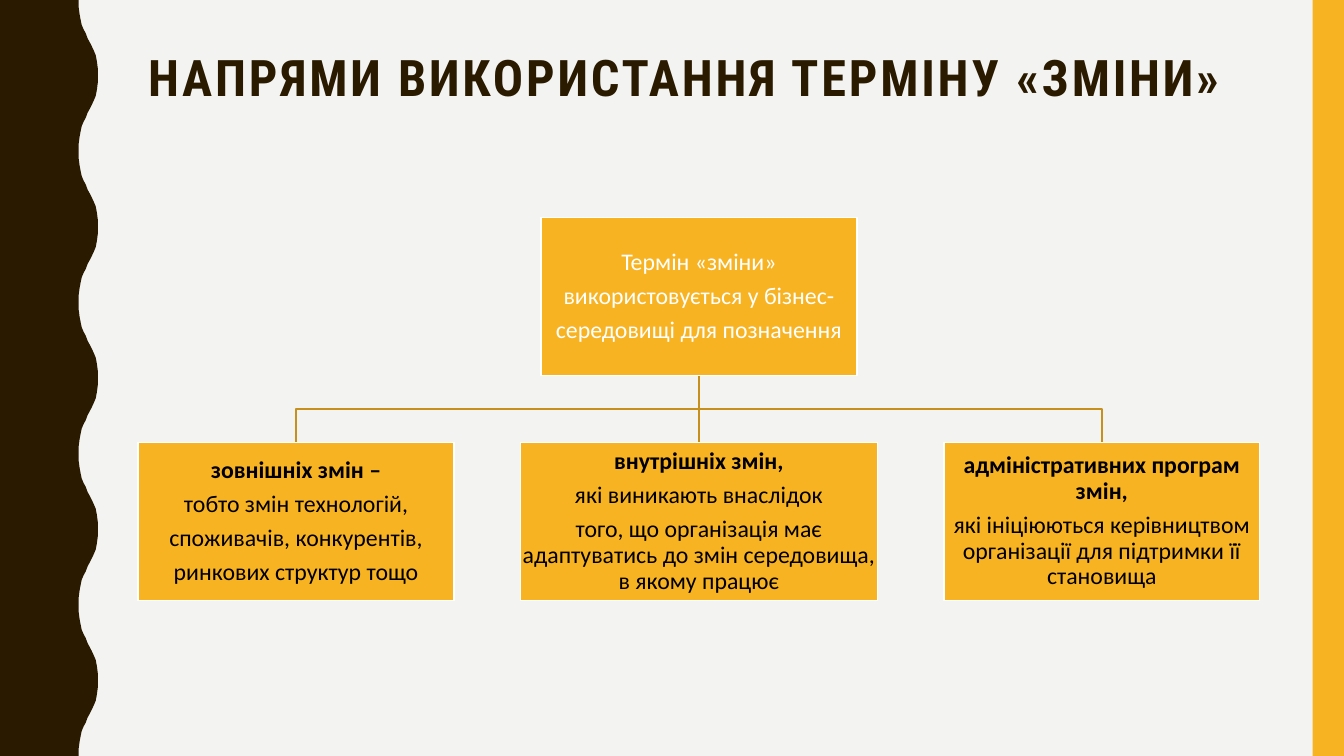
from pptx import Presentation
from pptx.dml.color import RGBColor
from pptx.enum.shapes import MSO_CONNECTOR, MSO_SHAPE
from pptx.enum.text import MSO_ANCHOR, PP_ALIGN
from pptx.oxml.ns import qn
from pptx.util import Inches, Pt
from lxml.etree import SubElement

COLORS = {"bg": "F3F3F2", "dark": "2A1A00", "amber": "F8B323",
          "link": "C78F1C", "white": "FFFFFF", "black": "000000"}

# Half a wave: (share of its width, share of its height), trough to crest
HALF_WAVE = [(0, 0), (0, .09), (.05, .19), (.11, .27), (.16, .33), (.26, .39),
             (.37, .44), (.47, .51), (.58, .56), (.68, .61), (.79, .67),
             (.89, .73), (.95, .81), (1, .91), (1, 1)]

ROOT = ["Термін «зміни»", "використовується у бізнес-",
        "середовищі для позначення"]
BRANCHES = [
    (23.5, ["зовнішніх змін –", "тобто змін технологій,",
            "споживачів, конкурентів,", "ринкових структур тощо"]),
    (26.55, ["внутрішніх змін,", "які виникають внаслідок",
             "того, що організація має адаптуватись до змін середовища, "
             "в якому працює"]),
    (23.5, ["адміністративних програм змін,",
            "які ініціюються керівництвом організації для підтримки її "
            "становища"]),
]


class Deck:
    """Holds the style and the slide; all lengths are percent of its size."""

    def __init__(self):
        self.prs = Presentation()
        self.prs.slide_width, self.prs.slide_height = Inches(13.33), Inches(7.5)
        self.s = self.prs.slides.add_slide(self.prs.slide_layouts[6])
        self.paint(self.s.background.fill, "bg")

    def paint(self, fill, color):
        fill.solid()
        fill.fore_color.rgb = RGBColor.from_string(COLORS[color])

    def stroke(self, line, color):
        self.paint(line.fill, color)
        line.width = Pt(1)

    def x(self, share):
        return round(self.prs.slide_width * share / 100)

    def y(self, share):
        return round(self.prs.slide_height * share / 100)

    def area(self, left, top, width, height):
        return self.x(left), self.y(top), self.x(width), self.y(height)

    def outline(self, points, close):
        pts = [(self.x(x), self.y(y)) for x, y in points]
        fb = self.s.shapes.build_freeform(*pts[0])
        fb.add_line_segments(pts[1:], close=close)
        sp = fb.convert_to_shape()
        sp.shadow.inherit = False
        return sp

    def wavy_edge(self, trough, width, halves):
        step = 100 / halves
        points = [(0, 0)]
        for i in range(halves):
            half = HALF_WAVE
            if i % 2:
                half = [(dx, 1 - dy) for dx, dy in reversed(HALF_WAVE)]
            points += [(trough + width * dx, step * (i + dy)) for dx, dy in half]
        sp = self.outline(points + [(0, 100)], close=True)
        self.paint(sp.fill, "dark")
        sp.line.fill.background()

    def rect(self, *area, border=None):
        sp = self.s.shapes.add_shape(MSO_SHAPE.RECTANGLE, *self.area(*area))
        sp.shadow.inherit = False
        self.paint(sp.fill, "amber")
        if border:
            self.stroke(sp.line, border)
        else:
            sp.line.fill.background()
        return sp

    def put_text(self, p, text, font, size, color, bold):
        r = p.add_run()
        r.text = text
        p.line_spacing = 0.9
        p.font.name, p.font.size, p.font.bold = font, Pt(size), bold
        p.font.color.rgb = RGBColor.from_string(COLORS[color])
        return r

    def title(self, text, *area):
        tf = self.s.shapes.add_textbox(*self.area(*area)).text_frame
        tf.word_wrap = True
        tf.vertical_anchor = MSO_ANCHOR.MIDDLE
        r = self.put_text(tf.paragraphs[0], text, "Roboto Condensed", 36, "dark", True)
        r._r.get_or_add_rPr().set("spc", "200")

    def box(self, lines, *area, color="black", bold_first=True):
        tf = self.rect(*area, border="white").text_frame
        tf.word_wrap = True
        tf.vertical_anchor = MSO_ANCHOR.MIDDLE
        tf.margin_left = tf.margin_right = Inches(0.01)
        tf.margin_top = tf.margin_bottom = Inches(0.01)
        for i, line in enumerate(lines):
            p = tf.paragraphs[0] if i == 0 else tf.add_paragraph()
            p.alignment = PP_ALIGN.CENTER
            p.space_after = Pt(6)
            self.put_text(p, line, "Calibri", 17, color, bold_first and i == 0)

    def link(self, x1, y1, x2, y2):
        """Joins parent to child: straight when aligned, else with two bends."""
        if abs(x1 - x2) < 0.01:
            sp = self.s.shapes.add_connector(
                MSO_CONNECTOR.STRAIGHT, self.x(x1), self.y(y1), self.x(x2), self.y(y2))
            SubElement(sp._element.spPr, qn("a:effectLst"))
            self.stroke(sp.line, "link")
        else:
            mid = (y1 + y2) / 2
            sp = self.outline([(x1, y1), (x1, mid), (x2, mid), (x2, y2)], close=False)
            sp.fill.background()
            self.stroke(sp.line, "link")


def main():
    deck = Deck()
    deck.wavy_edge(trough=5.85, width=1.43, halves=10)
    deck.rect(97.67, 0, 2.33, 100)
    deck.title("НАПРЯМИ ВИКОРИСТАННЯ ТЕРМІНУ «ЗМІНИ»", 10.28, 6.1, 83.5, 8.9)

    left, gap, box_w, box_h = 10.28, 4.95, 23.5, 20.9
    root_top, branch_top = 28.8, 58.55
    center = left + (sum(w for w, _ in BRANCHES) + 2 * gap) / 2
    for width, lines in BRANCHES:
        deck.link(center, root_top + box_h, left + width / 2, branch_top)
        deck.box(lines, left, branch_top, width, box_h)
        left += width + gap
    deck.box(ROOT, center - box_w / 2, root_top, box_w, box_h,
             color="white", bold_first=False)
    deck.prs.save("out.pptx")


if __name__ == "__main__":
    main()
